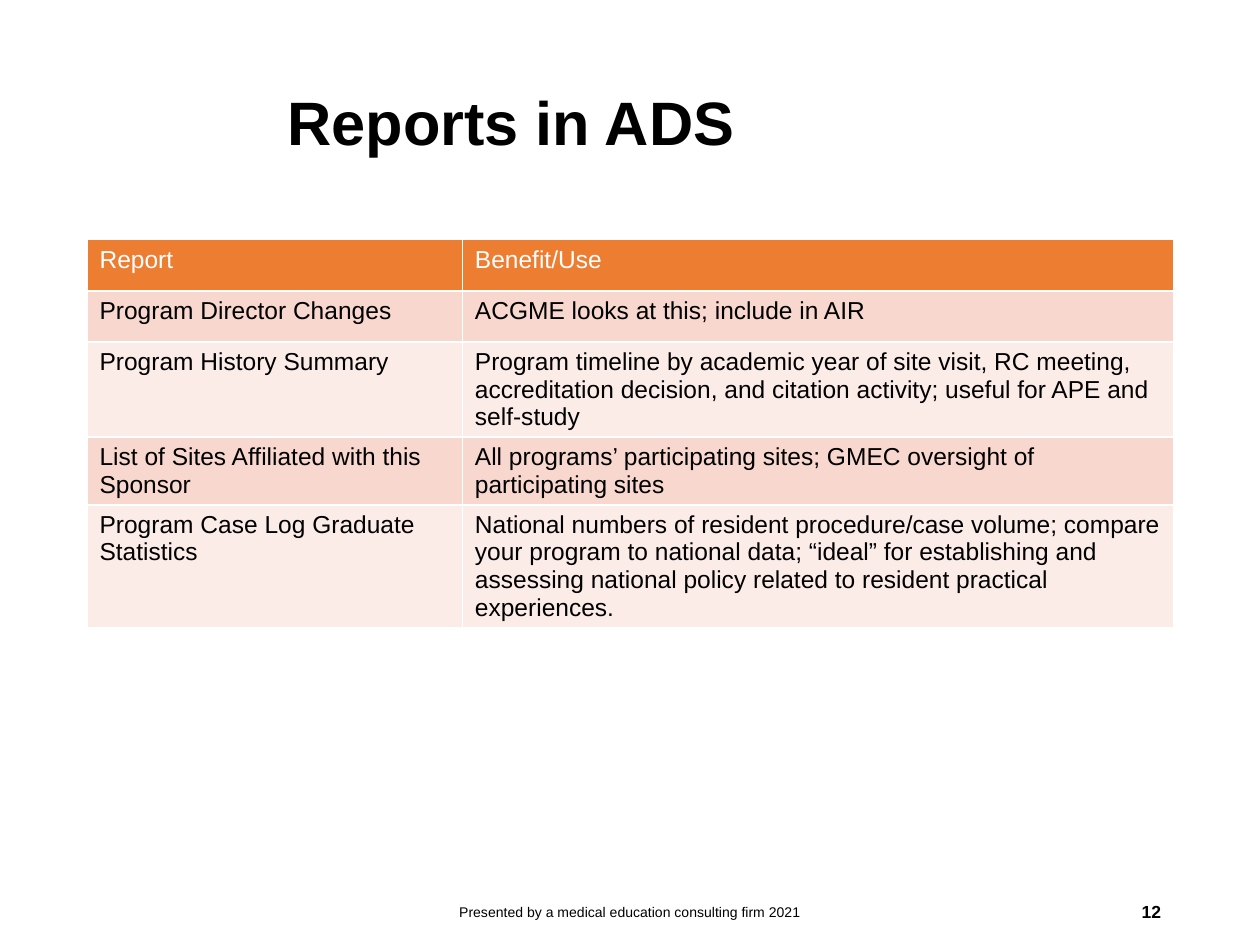
from lxml import etree
from pptx import Presentation
from pptx.dml.color import RGBColor
from pptx.enum.text import MSO_ANCHOR, PP_ALIGN
from pptx.oxml.ns import qn
from pptx.util import Pt

MIDDLE = MSO_ANCHOR.MIDDLE
LEFT, CENTER, RIGHT = PP_ALIGN.LEFT, PP_ALIGN.CENTER, PP_ALIGN.RIGHT
BLACK = RGBColor(0x00, 0x00, 0x00)
WHITE = RGBColor(0xFF, 0xFF, 0xFF)
ORANGE = RGBColor(0xED, 0x7D, 0x31)
BANDS = (RGBColor(0xFC, 0xEC, 0xE8), RGBColor(0xF8, 0xD7, 0xCE))
FONT = "Arial"
TITLE_LAYOUT = 5
COLUMN_WIDTHS = (214.5, 406.5)
ROW_HEIGHT = 29.2

REPORTS = (
    ("Report", "Benefit/Use"),
    ("Program Director Changes", "ACGME looks at this; include in AIR"),
    ("Program History Summary",
     "Program timeline by academic year of site visit, RC meeting, accreditation "
     "decision, and citation activity; useful for APE and self-study"),
    ("List of Sites Affiliated with this Sponsor",
     "All programs’ participating sites; GMEC oversight of participating sites"),
    ("Program Case Log Graduate Statistics",
     "National numbers of resident procedure/case volume; compare your program to "
     "national data; “ideal” for establishing and assessing national policy related "
     "to resident practical experiences."),
)


def write_text(frame, text, size, color=BLACK, bold=False, align=LEFT):
    """Set one paragraph of text and format its run."""
    frame.text = text
    para = frame.paragraphs[0]
    para.alignment = align
    font = para.runs[0].font
    font.name, font.size, font.bold = FONT, Pt(size), bold
    font.color.rgb = color


def add_title(page, text):
    """Fill and place the title placeholder."""
    title = page.shapes.title
    title.left, title.top, title.width, title.height = Pt(157), Pt(19.5), Pt(514), Pt(104.5)
    frame = title.text_frame
    frame.margin_left = frame.margin_right = Pt(7.2)
    frame.margin_top = frame.margin_bottom = Pt(7.2)
    frame.vertical_anchor = MIDDLE
    write_text(frame, text, 35, bold=True)
    frame.paragraphs[0].line_spacing = 0.9


def add_borders(cell):
    """Draw a thin white line on every side of a cell."""
    properties = cell._tc.get_or_add_tcPr()
    for side in ("a:lnL", "a:lnR", "a:lnT", "a:lnB"):
        line = etree.SubElement(properties, qn(side), w=str(Pt(1)))
        fill = etree.SubElement(line, qn("a:solidFill"))
        etree.SubElement(fill, qn("a:srgbClr"), val=str(WHITE))


def add_report_table(page):
    """Add the banded table of reports and their uses."""
    table = page.shapes.add_table(
        len(REPORTS), len(COLUMN_WIDTHS), Pt(49.7), Pt(137),
        Pt(sum(COLUMN_WIDTHS)), Pt(ROW_HEIGHT * len(REPORTS))).table
    for column, width in zip(table.columns, COLUMN_WIDTHS):
        column.width = Pt(width)
    for row_index, report in enumerate(REPORTS):
        header = row_index == 0
        for column_index, text in enumerate(report):
            cell = table.cell(row_index, column_index)
            add_borders(cell)
            cell.fill.solid()
            cell.fill.fore_color.rgb = ORANGE if header else BANDS[row_index % 2]
            write_text(cell.text_frame, text, 14, WHITE if header else BLACK)


def add_footer(page, text, left, width, size, align, bold=False):
    """Add a text box on the footer line."""
    box = page.shapes.add_textbox(Pt(left), Pt(506.5), Pt(width), Pt(28.8))
    box.text_frame.word_wrap = True
    box.text_frame.vertical_anchor = MIDDLE
    write_text(box.text_frame, text, size, bold=bold, align=align)


def main():
    """Build and save the deck."""
    deck = Presentation()
    deck.slide_width, deck.slide_height = Pt(720), Pt(540)
    page = deck.slides.add_slide(deck.slide_layouts[TITLE_LAYOUT])
    add_report_table(page)
    add_title(page, "Reports in ADS")
    add_footer(page, "Presented by a medical education consulting firm 2021",
               238.5, 243, 8, CENTER)
    add_footer(page, "12", 508.5, 162, 10, RIGHT, bold=True)
    deck.save("out.pptx")


if __name__ == "__main__":
    main()
